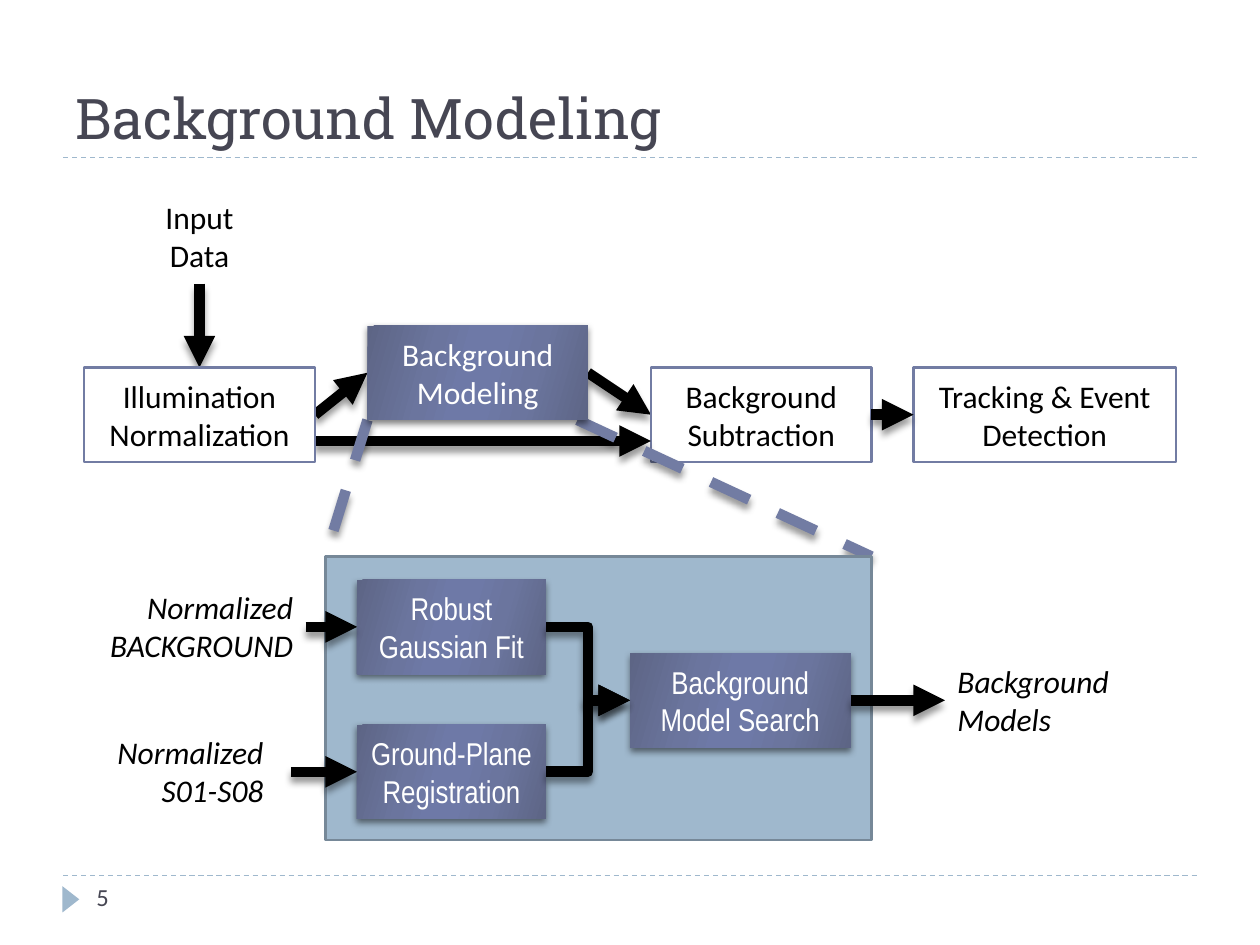
from lxml import etree
from pptx import Presentation
from pptx.dml.color import RGBColor
from pptx.enum.dml import MSO_LINE
from pptx.enum.shapes import MSO_CONNECTOR, MSO_SHAPE
from pptx.enum.text import MSO_ANCHOR, MSO_AUTO_SIZE, PP_ALIGN
from pptx.oxml.ns import qn
from pptx.util import Inches, Pt

RECT, WEDGE = MSO_SHAPE.RECTANGLE, MSO_SHAPE.ISOSCELES_TRIANGLE
LINE, ELBOW = MSO_CONNECTOR.STRAIGHT, MSO_CONNECTOR.ELBOW
DASH = MSO_LINE.DASH
TOP, MIDDLE, BOTTOM = MSO_ANCHOR.TOP, MSO_ANCHOR.MIDDLE, MSO_ANCHOR.BOTTOM
LEFT, CENTER, RIGHT = PP_ALIGN.LEFT, PP_ALIGN.CENTER, PP_ALIGN.RIGHT
GROW, FIXED = MSO_AUTO_SIZE.SHAPE_TO_FIT_TEXT, MSO_AUTO_SIZE.NONE

BLACK = RGBColor(0x00, 0x00, 0x00)
WHITE = RGBColor(0xFF, 0xFF, 0xFF)
SLATE = RGBColor(0x46, 0x46, 0x53)
INDIGO = RGBColor(0x72, 0x7C, 0xA3)
SKY = RGBColor(0x9F, 0xB8, 0xCD)
STEEL = RGBColor(0x76, 0x88, 0x98)
DARK = RGBColor(0x5D, 0x65, 0x85)
MID = RGBColor(0x6B, 0x75, 0x9E)
LIGHT = RGBColor(0x6E, 0x79, 0xA7)
STOPS = ((0, DARK), (30, MID), (45, LIGHT), (55, LIGHT), (73, MID), (100, DARK))

BODY, NARROW, HEAD = "Calibri", "Arial Narrow", "Roboto Slab"


def grid(*cells):
    """Turn grid cells, twelve to the inch, into lengths."""
    return [Inches(cell / 12) for cell in cells]


def write(frame, text, size=18, font=BODY, color=BLACK, italic=False,
          align=(LEFT,), anchor=TOP, wrap=True, fit=FIXED):
    """Fill a text frame, one paragraph a line, with the given format."""
    frame.text = text
    frame.word_wrap = wrap
    frame.auto_size = fit
    frame.vertical_anchor = anchor
    for i, para in enumerate(frame.paragraphs):
        para.alignment = align[i % len(align)]
        face = para.runs[0].font
        face.size, face.name, face.italic = Pt(size), font, italic
        face.color.rgb = color


def add(node, tag, **attrs):
    """Append a drawing element and return it."""
    child = etree.SubElement(node, qn(tag))
    for key, value in attrs.items():
        child.set(key, str(value))
    return child


def shade(shape, alpha, dist):
    """Give a shape a soft shadow that falls straight down."""
    effects = add(shape.element.spPr, "a:effectLst")
    if alpha:
        outer = add(effects, "a:outerShdw", blurRad=Pt(4), dist=Pt(dist),
                    dir=5400000, rotWithShape=0)
        tint = add(outer, "a:srgbClr", val=BLACK)
        add(tint, "a:alpha", val=alpha * 1000)


class Chart:
    """Hold the style and the current slide of a flow diagram."""

    def __init__(self, deck):
        """Start a title-only slide."""
        self.slide = deck.slides.add_slide(deck.slide_layouts[5])
        self.shapes = self.slide.shapes

    def title(self, text, *cells):
        """Place and format the title."""
        head = self.shapes.title
        head.left, head.top, head.width, head.height = grid(*cells)
        write(head.text_frame, text, size=32, font=HEAD, color=SLATE,
              anchor=BOTTOM)

    def label(self, text, *cells, **style):
        """Add a text box."""
        box = self.shapes.add_textbox(*grid(*cells))
        write(box.text_frame, text, **style)
        return box

    def block(self, *cells, kind=RECT, fill=WHITE, edge=None):
        """Add a flat shape."""
        shape = self.shapes.add_shape(kind, *grid(*cells))
        shape.shadow.inherit = False
        shape.fill.solid()
        shape.fill.fore_color.rgb = fill
        if edge:
            shape.line.color.rgb, shape.line.width = edge, Pt(1.5)
        else:
            shape.line.fill.background()
        return shape

    def step(self, text, *cells, wrap=True):
        """Add a plain outlined step."""
        box = self.block(*cells, edge=INDIGO)
        write(box.text_frame, text, align=(CENTER,), anchor=MIDDLE, wrap=wrap)
        return box

    def stage(self, text, *cells, font=NARROW, wrap=True):
        """Add a shaded stage with a gradient."""
        box = self.shapes.add_shape(RECT, *grid(*cells))
        box.fill.gradient()
        box.fill.gradient_angle = 344
        stops = box.element.spPr.find(".//" + qn("a:gsLst"))
        stops.clear()
        for place, color in STOPS:
            add(add(stops, "a:gs", pos=place * 1000), "a:srgbClr", val=color)
        box.line.fill.background()
        shade(box, 50, 2)
        write(box.text_frame, text, font=font, color=WHITE, align=(CENTER,),
              anchor=MIDDLE, wrap=wrap)
        return box

    def rule(self, *cells, kind=LINE, color=BLACK, width=6, dash=None,
             arrow=False, alpha=40):
        """Add a line from one grid point to another."""
        line = self.shapes.add_connector(kind, *grid(*cells))
        line.line.color.rgb, line.line.width = color, Pt(width)
        if dash:
            line.line.dash_style = dash
        if arrow:
            add(line.element.spPr.find(qn("a:ln")), "a:tailEnd",
                type="triangle")
        shade(line, alpha, 3.4)
        return line

    def link(self, start, end, kind=LINE, sides=(3, 1), back=False):
        """Join two shapes with an arrow."""
        line = self.rule(0, 0, 1, 1, kind=kind, arrow=True)
        line.begin_connect(start, sides[0])
        line.end_connect(end, sides[1])
        if back:
            self.shapes.element.insert(2, line.element)


def main():
    """Build the slide and save it."""
    deck = Presentation()
    deck.slide_width, deck.slide_height = grid(120, 90)
    chart = Chart(deck)
    for row in (83.4, 15):
        chart.rule(6, row, 114, row, color=SKY, width=0.75, dash=DASH, alpha=0)
    mark = chart.block(5.5, 84.85, 2.5, 1.6, kind=WEDGE, fill=SKY)
    mark.rotation = 90
    chart.title("Background Modeling", 6, 2, 108, 13)
    chart.label("5", 8, 83.4, 26, 4.8, size=14, color=SLATE)

    source = chart.label("Input Data", 12, 18, 14, 9, align=(CENTER,),
                         anchor=MIDDLE)
    track = chart.step("Tracking & Event Detection", 87, 35, 25, 9)
    split = chart.step("Background Subtraction", 62, 35, 21, 9)
    chart.link(split, track)
    chart.rule(30, 42, 62, 42, arrow=True)
    for start, end in ((35, 31), (55, 83)):
        chart.rule(start, 40, end, 53, color=INDIGO, dash=DASH)

    chart.block(31, 53, 52, 27, fill=SKY, edge=STEEL)
    fit = chart.stage("Robust Gaussian Fit", 34, 55.2, 18, 9)
    plane = chart.stage("Ground-Plane Registration", 34, 69, 18, 9)
    search = chart.stage("Background Model Search", 60, 62.2, 21, 9)
    note = {"italic": True, "fit": GROW}
    scene = chart.label("Normalized\nBACKGROUND", 5, 55.45, 24.1, 8.5,
                        align=(RIGHT,), wrap=False, **note)
    clips = chart.label("Normalized\nS01-S08", 10, 69.25, 17.7, 8.5,
                        align=(LEFT, RIGHT), wrap=False, **note)
    result = chart.label("Background Models", 90, 62.45, 20, 8.5, **note)
    for start, end in ((plane, search), (fit, search), (scene, fit),
                       (search, result), (clips, plane)):
        chart.link(start, end, kind=ELBOW)

    model = chart.stage("Background\nModeling", 35, 31, 21, 9, font=BODY,
                        wrap=False)
    light = chart.step("Illumination\nNormalization", 8, 35, 22, 9, wrap=False)
    chart.link(source, light, sides=(2, 0), back=True)
    chart.link(light, model, back=True)
    chart.link(model, split, back=True)
    deck.save("out.pptx")


if __name__ == "__main__":
    main()
